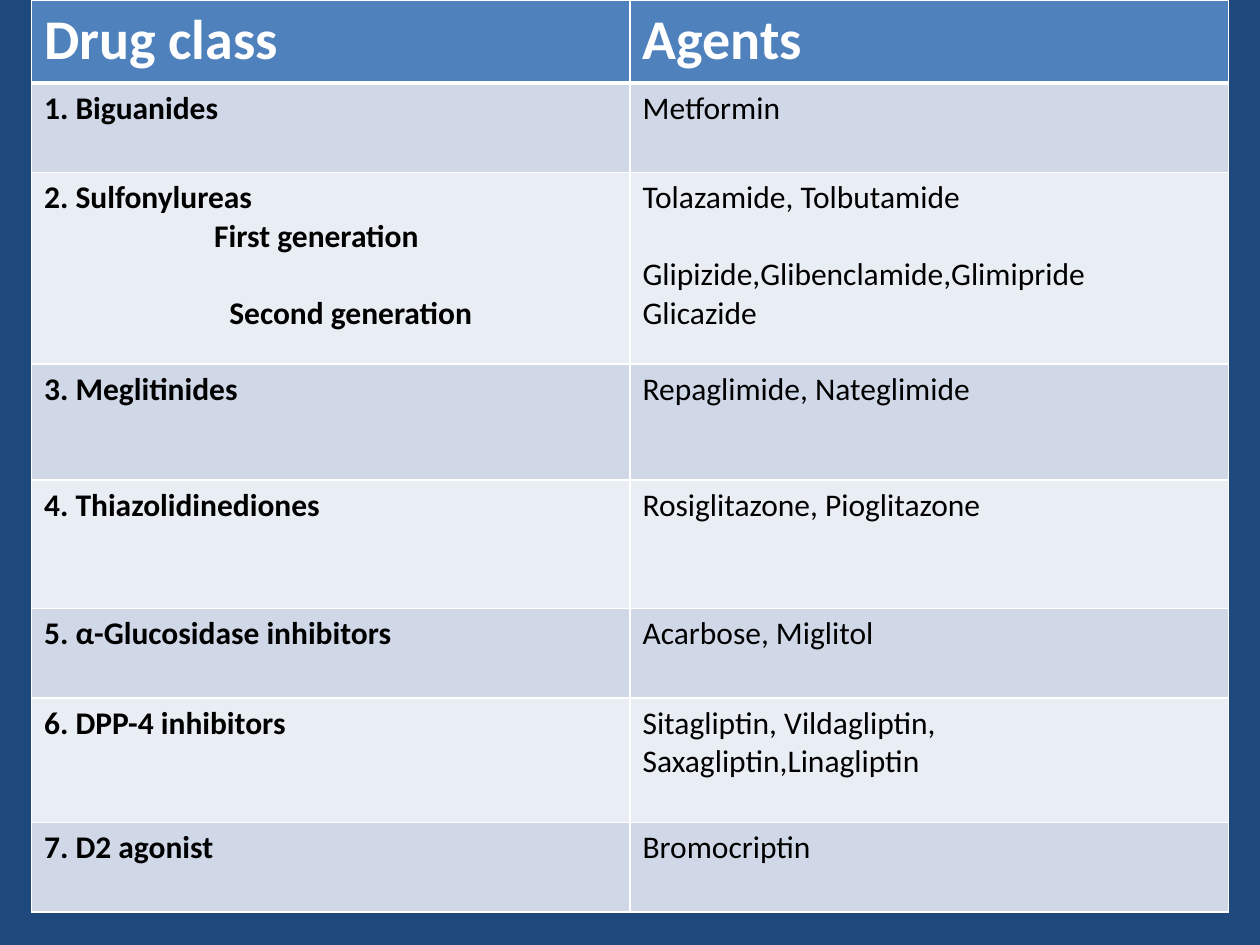
from lxml import etree
from pptx import Presentation, util as u
from pptx.dml.color import RGBColor as Rgb
from pptx.oxml.ns import qn

# Content: lines of a cell are strings or (text, indent in inches, space before in points)
HEAD = ("Drug class", "Agents")
ROWS = [
    (["1. Biguanides"], ["Metformin"]),
    (["2. Sulfonylureas", ("First generation", 1.35, 0), ("Second generation", 1.47, 22)],
     ["Tolazamide, Tolbutamide", ("Glipizide,Glibenclamide,Glimipride", 0, 22), "Glicazide"]),
    (["3. Meglitinides"], ["Repaglimide, Nateglimide"]),
    (["4. Thiazolidinediones"], ["Rosiglitazone, Pioglitazone"]),
    (["5. α-Glucosidase inhibitors"], ["Acarbose, Miglitol"]),
    (["6. DPP-4 inhibitors"], ["Sitagliptin, Vildagliptin, Saxagliptin,Linagliptin"]),
    (["7. D2 agonist"], ["Bromocriptin"]),
]
HIGH = [0.66, 0.71, 1.52, 0.92, 1.02, 0.71, 0.99, 0.71]
WIDE, TALL, EDGE = 10, 7.5, 0.25
COLORS = {"back": "1F497D", "head": "4F81BD", "odd": "D0D8E8",
          "even": "E9EDF4", "line": "FFFFFF", "light": "FFFFFF", "dark": "000000"}


def paint(fill, name):
    fill.solid()
    fill.fore_color.rgb = Rgb.from_string(COLORS[name])


def border(cell, head, below):
    """White lines on all sides, thick on both sides of the header's lower edge."""
    props = cell._tc.get_or_add_tcPr()
    for side in "LRTB":
        thick = (head and side == "B") or (below and side == "T")
        line = etree.SubElement(props, qn("a:ln" + side), w=str(u.Pt(3 if thick else 1)))
        fill = etree.SubElement(line, qn("a:solidFill"))
        etree.SubElement(fill, qn("a:srgbClr"), val=COLORS["line"])


def write(cell, lines, form, tint):
    frame = cell.text_frame
    for i, line in enumerate(lines):
        words, dent, gap = (line, 0, 0) if isinstance(line, str) else line
        para = frame.paragraphs[0] if i == 0 else frame.add_paragraph()
        para.space_before = u.Pt(gap)
        if dent:
            para._p.get_or_add_pPr().set("marL", str(u.Inches(dent)))
        run = para.add_run()
        run.text = words
        for key, val in form.items():
            setattr(run.font, key, val)
        run.font.color.rgb = Rgb.from_string(COLORS[tint])


# Slide
deck = Presentation()
deck.slide_width, deck.slide_height = u.Inches(WIDE), u.Inches(TALL)
slide = deck.slides.add_slide(deck.slide_layouts[6])
paint(slide.background.fill, "back")

# Table grid
cells = [tuple([name] for name in HEAD)] + ROWS
span = WIDE - 2 * EDGE
table = slide.shapes.add_table(len(cells), len(HEAD), u.Inches(EDGE), 0,
                               u.Inches(span), u.Inches(sum(HIGH))).table
for col in table.columns:
    col.width = u.Inches(span / len(HEAD))
for row, high in zip(table.rows, HIGH):
    row.height = u.Inches(high)

# Cells
for r, row in enumerate(cells):
    head = r == 0
    for c, lines in enumerate(row):
        cell = table.cell(r, c)
        border(cell, head, r == 1)
        paint(cell.fill, "head" if head else "odd" if r % 2 else "even")
        form = {"name": "Calibri", "size": u.Pt(32 if head else 18), "bold": head or c == 0}
        write(cell, lines, form, "light" if head else "dark")

deck.save("out.pptx")
